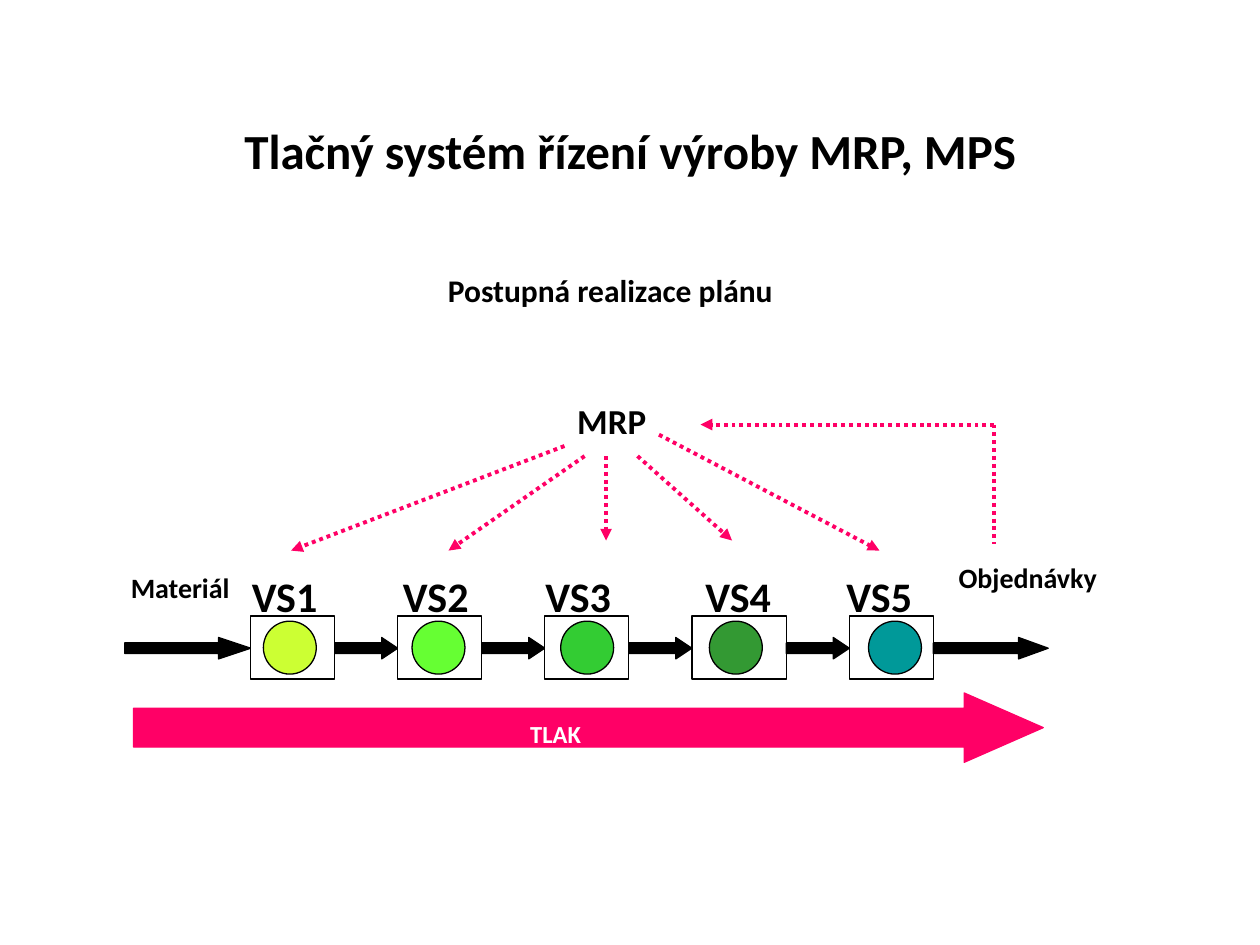
from lxml import etree
from pptx import Presentation
from pptx.dml.color import RGBColor
from pptx.enum.dml import MSO_LINE
from pptx.enum.shapes import MSO_CONNECTOR, MSO_SHAPE
from pptx.enum.text import PP_ALIGN
from pptx.oxml.ns import qn
from pptx.util import Inches, Pt

RECT, OVAL, ARROW = MSO_SHAPE.RECTANGLE, MSO_SHAPE.OVAL, MSO_SHAPE.RIGHT_ARROW
STRAIGHT, DOTTED = MSO_CONNECTOR.STRAIGHT, MSO_LINE.ROUND_DOT
LEFT, CENTER = PP_ALIGN.LEFT, PP_ALIGN.CENTER

COLORS = {"ink": "000000", "paper": "FFFFFF", "push": "FF0066"}
UNIT = Inches(10) / 100
STATIONS = [
    ("VS1", 6.67, "CCFF33"),
    ("VS2", 6.67, "66FF33"),
    ("VS3", 6.67, "33CC33"),
    ("VS4", 7.5, "339933"),
    ("VS5", 6.67, "009999"),
]


def rgb(name):
    """Return a palette colour, or the hex string itself, as RGB."""
    return RGBColor.from_string(COLORS.get(name, name))


def grid(*cells):
    """Convert grid units, a hundredth of the slide width each, to EMU."""
    return [round(cell * UNIT) for cell in cells]


def add_shape(s, kind, place, fill, line=None):
    """Add a flat preset shape with an optional thin outline."""
    sp = s.shapes.add_shape(kind, *grid(*place))
    sp.shadow.inherit = False
    sp.fill.solid()
    sp.fill.fore_color.rgb = rgb(fill)
    if line:
        sp.line.color.rgb = rgb(line)
        sp.line.width = Pt(0.75)
    else:
        sp.line.fill.background()
    return sp


def add_arrow(s, place, head, color="ink", shaft=0.5):
    """Add a block arrow with the given head and shaft proportions."""
    sp = add_shape(s, ARROW, place, color, color)
    sp.adjustments[0] = shaft
    sp.adjustments[1] = head


def write(sp, text, size, align=LEFT, color="ink"):
    """Write one bold paragraph into a shape and return it."""
    tf = sp.text_frame
    tf.word_wrap = True
    p = tf.paragraphs[0]
    p.alignment = align
    r = p.add_run()
    r.text = text
    for name, value in {"name": "Calibri", "size": Pt(size), "bold": True}.items():
        setattr(r.font, name, value)
    r.font.color.rgb = rgb(color)
    return p


def add_text(s, place, text, size, align=LEFT, color="ink"):
    """Add a text box with one bold paragraph and return the paragraph."""
    return write(s.shapes.add_textbox(*grid(*place)), text, size, align, color)


def add_signal(s, start, end, head=True):
    """Add a dotted information line, with an arrowhead if wanted."""
    line = s.shapes.add_connector(STRAIGHT, *grid(*start, *end))
    line.line.color.rgb = rgb("push")
    line.line.width = Pt(2.25)
    line.line.dash_style = DOTTED
    if head:
        etree.SubElement(line.line._get_or_add_ln(), qn("a:tailEnd"), type="triangle")
    etree.SubElement(line._element.spPr, qn("a:effectLst"))


def add_headings(s, left, top, width):
    """Place the title and the subtitle."""
    add_text(s, (left, top, width, 5.7),
             "Tlačný systém řízení výroby MRP, MPS", 28, CENTER)
    sp = add_shape(s, RECT, (left + 7.1, top + 11.9, 70.9, 4), "paper")
    write(sp, "Postupná realizace plánu", 18, CENTER)


def add_planning(s, left, top, width, height):
    """Place the MRP label, its fan of signals and the order feedback."""
    right, bottom = left + width, top + height
    add_text(s, (left + 16.7, top, 17.5, 4.3), "MRP", 20, CENTER)
    fan = [
        ((21.7, 4.2), (0, 12.5)),
        ((23.3, 5), (12.5, 12.5)),
        ((25, 5), (25, 11.7)),
        ((27.5, 5), (35, 11.7)),
        ((29.2, 3.3), (46.7, 12.5)),
    ]
    for (x1, y1), (x2, y2) in fan:
        add_signal(s, (left + x1, top + y1), (left + x2, top + y2))
    corner = (right, top + 2.5)
    add_signal(s, corner, (left + 32.5, top + 2.5))
    add_signal(s, corner, (right, bottom), head=False)


def add_station_labels(s, left, top, width):
    """Place the station names in one row, spaced by tab stops."""
    p = add_text(s, (left, top, width, 5),
                 "\t".join(name for name, _, _ in STATIONS), 24)
    tabs = etree.SubElement(p._p.get_or_add_pPr(), qn("a:tabLst"))
    for stop in grid(12, 23.3, 36, 47.2):
        etree.SubElement(tabs, qn("a:tab"), pos=str(stop), algn="l")


def add_production_line(s, left, top, width):
    """Place the stations, the flow arrows between them and the labels."""
    add_text(s, (left - 1, top, 10.8, 3.7), "Materiál", 16, CENTER)
    add_text(s, (left + 65.2, top - 0.8, 17.5, 3.7), "Objednávky", 16)
    flow = top + 5.8
    add_arrow(s, (left, flow, 10, 1.7), 1.5)
    x = left + 10
    for i, (_, size, color) in enumerate(STATIONS):
        add_shape(s, RECT, (x, top + 4.1, size, 5), "paper", "ink")
        add_shape(s, OVAL, (x + 1 + 0.13 * i, top + 4.5, 4.2, 4.2), color, "ink")
        x += size
        if i < len(STATIONS) - 1:
            add_arrow(s, (x, flow, 5, 1.7), 0.75)
            x += 5
    add_arrow(s, (x, flow, left + width - x, 1.7), 1.38)
    add_station_labels(s, left + 9.1, top, 55.4)


def add_push_arrow(s, left, top, width, height):
    """Place the wide push arrow and its caption."""
    add_arrow(s, (left, top, width, height), 1.14, "push", 0.56)
    add_text(s, (left + 30.5, top + 1.6, 11, 3.4), "TLAK", 14, color="paper")


def main():
    """Build the slide and save it."""
    prs = Presentation()
    prs.slide_width, prs.slide_height = grid(100, 75)
    s = prs.slides.add_slide(prs.slide_layouts[6])
    add_headings(s, 5.9, 9.1, 88.2)
    add_planning(s, 23.1, 31.2, 55.8, 12)
    add_production_line(s, 9.9, 44.8, 73.3)
    add_push_arrow(s, 10.6, 55, 72.2, 5.5)
    prs.save("out.pptx")


if __name__ == "__main__":
    main()
